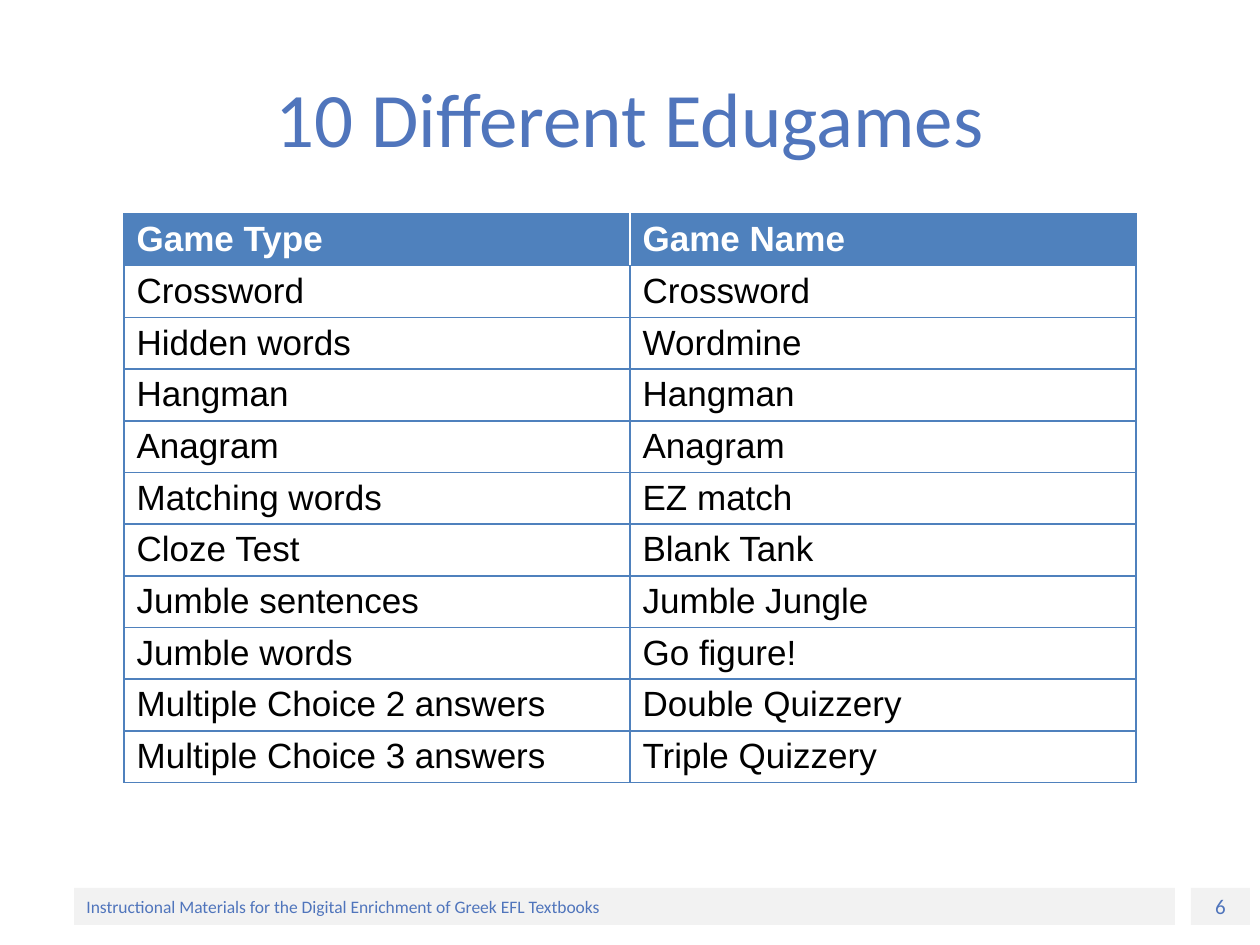
from dataclasses import dataclass

from lxml import etree
from pptx import Presentation
from pptx.dml.color import RGBColor
from pptx.enum.shapes import MSO_SHAPE
from pptx.enum.text import MSO_ANCHOR, PP_ALIGN
from pptx.oxml.ns import qn
from pptx.util import Emu, Inches, Pt

RECTANGLE = MSO_SHAPE.RECTANGLE
MIDDLE = MSO_ANCHOR.MIDDLE
LEFT, CENTER = PP_ALIGN.LEFT, PP_ALIGN.CENTER
TITLE_ONLY = 5
PX_PER_INCH = 126
GAMES = [
    ("Game Type", "Game Name"),
    ("Crossword", "Crossword"),
    ("Hidden words", "Wordmine"),
    ("Hangman", "Hangman"),
    ("Anagram", "Anagram"),
    ("Matching words", "EZ match"),
    ("Cloze Test", "Blank Tank"),
    ("Jumble sentences", "Jumble Jungle"),
    ("Jumble words", "Go figure!"),
    ("Multiple Choice 2 answers", "Double Quizzery"),
    ("Multiple Choice 3 answers", "Triple Quizzery"),
]


@dataclass(frozen=True)
class Theme:
    accent: str = "5075BC"
    grid: str = "4F81BD"
    band: str = "F2F2F2"
    white: str = "FFFFFF"
    black: str = "000000"
    heading_font: str = "Calibri"
    table_font: str = "Arial"
    title_size: int = 44
    table_size: int = 20
    number_size: int = 12
    footer_size: int = 10


def px(length):
    return Emu(round(length * Inches(1) / PX_PER_INCH))


class SlideBuilder:
    def __init__(self, slide, theme):
        self.slide = slide
        self.theme = theme

    def style(self, paragraph, font_name, size, color, bold=False, align=LEFT):
        paragraph.alignment = align
        font = paragraph.font
        font.name, font.size, font.bold = font_name, Pt(size), bold
        font.color.rgb = RGBColor.from_string(color)

    def title(self, text, left, top, width, height):
        title = self.slide.shapes.title
        title.left, title.top = px(left), px(top)
        title.width, title.height = px(width), px(height)
        frame = title.text_frame
        frame.text = text
        frame.vertical_anchor = MIDDLE
        self.style(frame.paragraphs[0], self.theme.heading_font,
                   self.theme.title_size, self.theme.accent, align=CENTER)

    def footer_band(self, text, left, top, width, height, size, align=LEFT):
        band = self.slide.shapes.add_shape(
            RECTANGLE, px(left), px(top), px(width), px(height))
        band.shadow.inherit = False
        band.fill.solid()
        band.fill.fore_color.rgb = RGBColor.from_string(self.theme.band)
        band.line.fill.background()
        frame = band.text_frame
        frame.text = text
        frame.word_wrap = True
        frame.vertical_anchor = MIDDLE
        self.style(frame.paragraphs[0], self.theme.heading_font, size,
                   self.theme.accent, align=align)

    def cell_borders(self, cell, **colors):
        """Draw 1 pt borders; keywords L, R, T and B override the grid colour."""
        properties = cell._tc.get_or_add_tcPr()
        for position, side in enumerate("LRTB"):
            line = etree.Element(qn(f"a:ln{side}"), w=str(Pt(1)))
            fill = etree.SubElement(line, qn("a:solidFill"))
            etree.SubElement(fill, qn("a:srgbClr"),
                             val=colors.get(side, self.theme.grid))
            properties.insert(position, line)

    def table(self, rows, left, top, width, height):
        theme = self.theme
        table = self.slide.shapes.add_table(
            len(rows), len(rows[0]), px(left), px(top), px(width), px(height)).table
        table.horz_banding = False
        for r, row in enumerate(rows):
            header = r == 0
            for c, text in enumerate(row):
                cell = table.cell(r, c)
                cell.text = text
                cell.margin_top = cell.margin_bottom = px(6)
                cell.fill.solid()
                cell.fill.fore_color.rgb = RGBColor.from_string(
                    theme.grid if header else theme.white)
                self.style(cell.text_frame.paragraphs[0], theme.table_font,
                           theme.table_size,
                           theme.white if header else theme.black, bold=header)
                inner_side = "R" if c == 0 else "L"
                self.cell_borders(cell, **({inner_side: theme.white} if header else {}))


def main():
    presentation = Presentation()
    presentation.slide_width, presentation.slide_height = px(1260), px(945)
    theme = Theme()
    slide = presentation.slides.add_slide(presentation.slide_layouts[TITLE_ONLY])
    builder = SlideBuilder(slide, theme)
    builder.footer_band("6", 1191, 888, 59, 37, theme.number_size, CENTER)
    builder.footer_band(
        "Instructional Materials for the Digital Enrichment of Greek EFL Textbooks",
        74, 888, 1101, 37, theme.footer_size)
    builder.title("10 Different Edugames", 63, 38, 1134, 157)
    builder.table(GAMES, 124, 214, 1012, 569)
    presentation.save("out.pptx")


if __name__ == "__main__":
    main()
